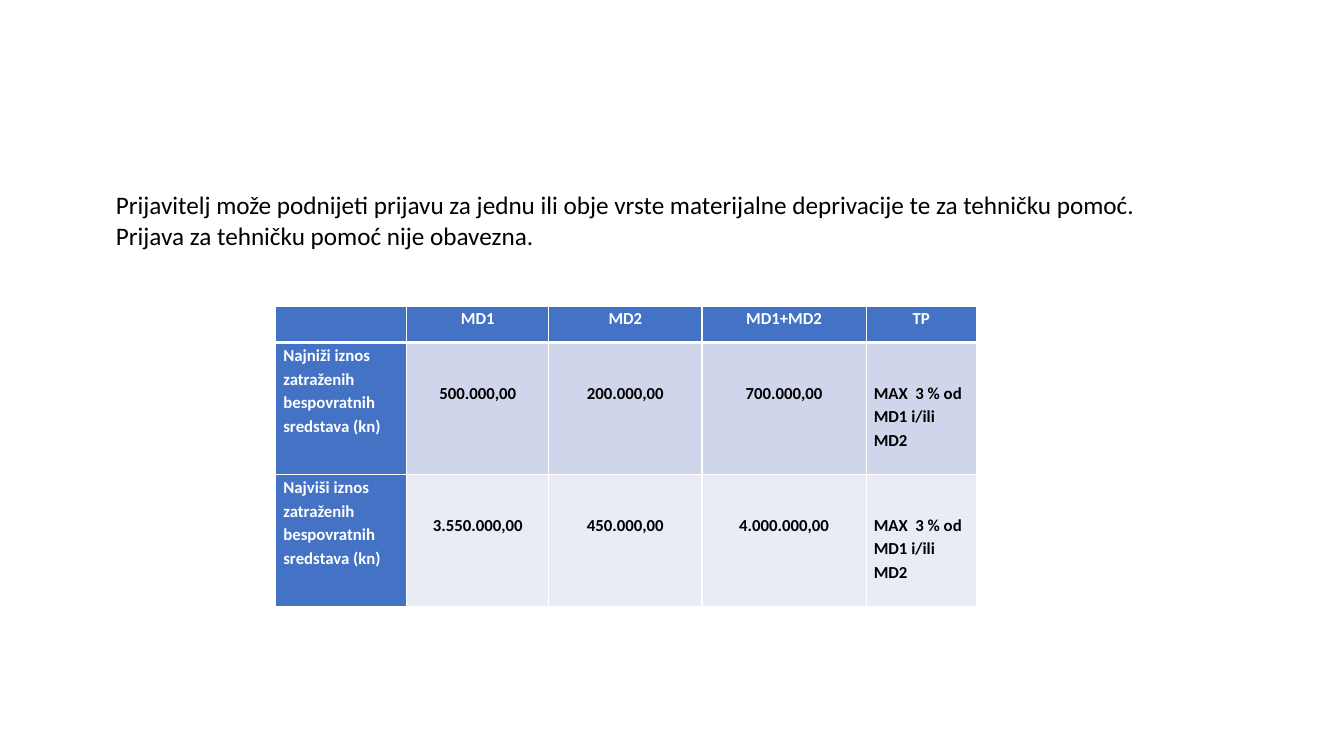
from pptx import Presentation
from pptx.dml.color import RGBColor
from pptx.enum.text import PP_ALIGN
from pptx.oxml import parse_xml
from pptx.oxml.ns import nsdecls
from pptx.util import Cm, Pt

# Content
INTRO = [
    "Prijavitelj može podnijeti prijavu za jednu ili obje vrste materijalne deprivacije te za tehničku pomoć.",
    "Prijava za tehničku pomoć nije obavezna.",
]
GRANTS = [
    ["", "MD1", "MD2", "MD1+MD2", "TP"],
    ["Najniži iznos zatraženih bespovratnih sredstava (kn)",
     "500.000,00", "200.000,00", "700.000,00", "MAX  3 % od MD1 i/ili MD2"],
    ["Najviši iznos zatraženih bespovratnih sredstava (kn)",
     "3.550.000,00", "450.000,00", "4.000.000,00", "MAX  3 % od MD1 i/ili MD2"],
]
COL_WIDTHS = [3.3, 3.58, 3.86, 4.14, 2.77]
ROW_HEIGHTS = [0.92, 3.33, 3.33]

THEME = {
    "font": "Calibri", "intro_size": Pt(18), "cell_size": Pt(12),
    "dark": "000000", "light": "FFFFFF", "head": "4472C4",
    "bands": ["CFD5EA", "E9EBF5"], "line": Pt(1), "head_line": Pt(3),
}


def style(p, size, color, align, bold=False):
    p.alignment = align
    p.font.name, p.font.size, p.font.bold = THEME["font"], size, bold
    p.font.color.rgb = RGBColor.from_string(color)


def add_border(cell, side, width):
    cell._tc.get_or_add_tcPr().append(parse_xml(
        f'<a:ln{side} {nsdecls("a")} w="{width}"><a:solidFill>'
        f'<a:srgbClr val="{THEME["light"]}"/></a:solidFill></a:ln{side}>'))


def fill_cell(cell, text, row, col):
    is_head = row == 0 or col == 0
    cell.margin_left = cell.margin_right = Cm(0.19)
    cell.margin_top = Cm(0 if is_head else 0.95)
    cell.margin_bottom = 0

    # Borders go ahead of the fill; the header rule is thicker
    thick = {"T": row == 1, "B": row == 0}
    for side in "LRTB":
        add_border(cell, side, THEME["head_line" if thick.get(side) else "line"])
    cell.fill.solid()
    color = THEME["head"] if is_head else THEME["bands"][(row - 1) % 2]
    cell.fill.fore_color.rgb = RGBColor.from_string(color)

    p = cell.text_frame.paragraphs[0]
    p.text = text
    p.line_spacing = 1.15
    left = row > 0 and col in (0, len(COL_WIDTHS) - 1)
    style(p, THEME["cell_size"], THEME["light" if is_head else "dark"],
          PP_ALIGN.LEFT if left else PP_ALIGN.CENTER, bold=True)


def main():
    prs = Presentation()
    prs.slide_width, prs.slide_height = Cm(33.87), Cm(19.05)
    s = prs.slides.add_slide(prs.slide_layouts[6])

    # Introduction
    tf = s.shapes.add_textbox(Cm(2.92), Cm(4.78), Cm(29.2), Cm(1.6)).text_frame
    tf.word_wrap = True
    tf.margin_left = tf.margin_right = tf.margin_top = tf.margin_bottom = 0
    for i, line in enumerate(INTRO):
        p = tf.add_paragraph() if i else tf.paragraphs[0]
        p.text = line
        style(p, THEME["intro_size"], THEME["dark"], PP_ALIGN.JUSTIFY)

    # Grant limits
    table = s.shapes.add_table(
        len(ROW_HEIGHTS), len(COL_WIDTHS), Cm(6.95), Cm(7.71),
        Cm(sum(COL_WIDTHS)), Cm(sum(ROW_HEIGHTS))).table
    for column, width in zip(table.columns, COL_WIDTHS):
        column.width = Cm(width)
    for row, height in zip(table.rows, ROW_HEIGHTS):
        row.height = Cm(height)
    for r, texts in enumerate(GRANTS):
        for c, text in enumerate(texts):
            fill_cell(table.cell(r, c), text, r, c)

    prs.save("out.pptx")


if __name__ == "__main__":
    main()
